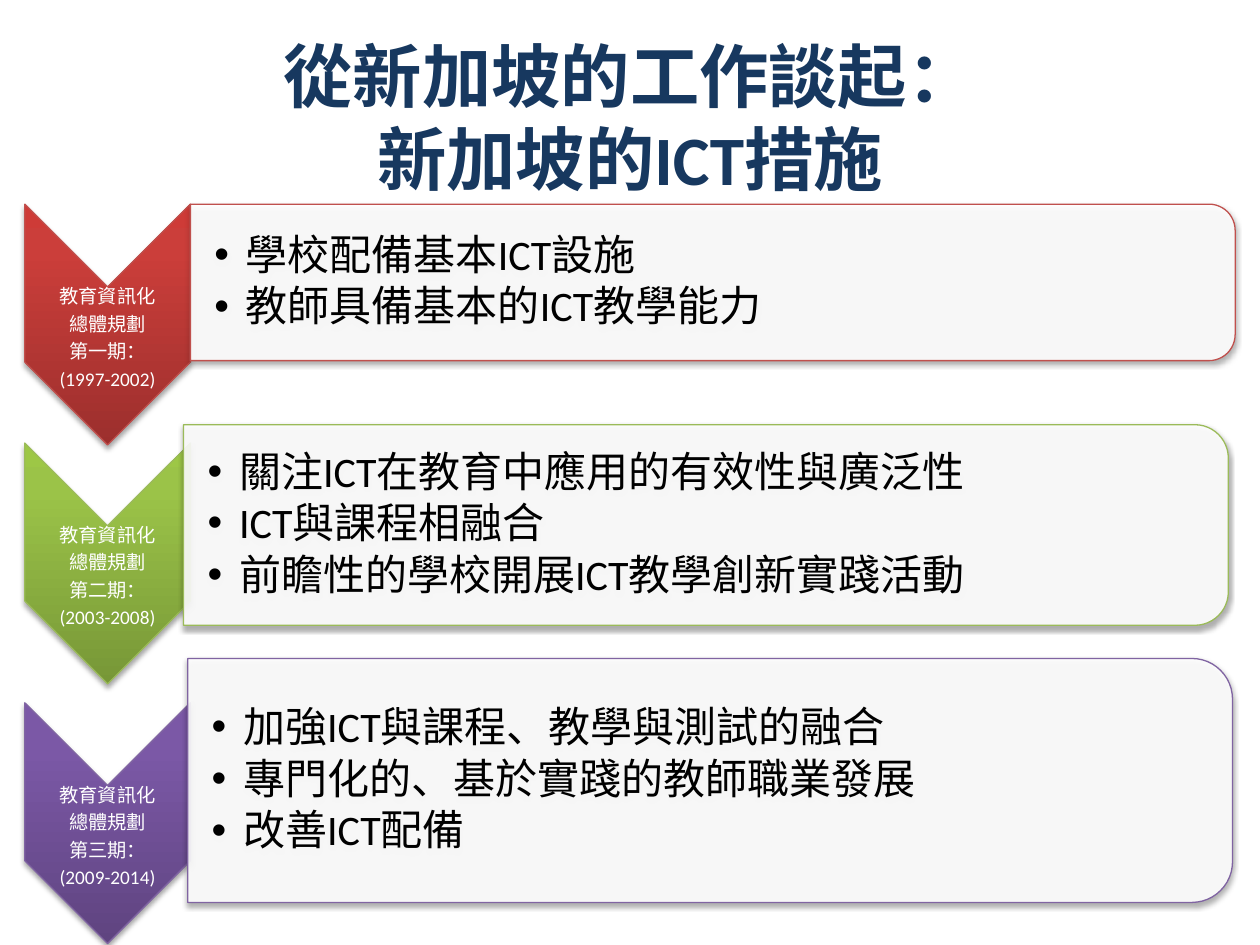
from copy import deepcopy
from dataclasses import dataclass
from math import cos, pi, sin

from lxml import etree
from pptx import Presentation
from pptx.dml.color import RGBColor
from pptx.enum import text
from pptx.oxml.ns import qn
from pptx.util import Pt

FONT = "Calibri"
COLORS = {
    "title": "17385F", "white": "FFFFFF", "black": "000000",
    "red": "C0504D", "green": "9BBB59", "purple": "8064A2",
}
# Gradient stops at 0, 80 and 100 percent, from the bottom up
GRADIENTS = {
    "red": ("9C2F2D", "CB3E3A", "CE3B37"),
    "green": ("779737", "9BC348", "9DC746"),
    "purple": ("5F4480", "7B58A6", "7C57A8"),
}
CHEVRON_LEFT, CHEVRON_WIDTH, CHEVRON_HEIGHT = 14.2, 94.6, 137.6
PANEL_WIDTH = 597


@dataclass
class Phase:
    color: str
    ordinal: str
    years: str
    chevron_top: float
    panel_left: float
    panel_top: float
    panel_height: float
    measures: tuple[str, ...]


PHASES = [
    Phase("red", "一", "1997-2002", 116.7, 108.8, 116.7, 89.4,
          ("學校配備基本ICT設施", "教師具備基本的ICT教學能力")),
    Phase("green", "二", "2003-2008", 253.2, 104.9, 242.7, 114.6,
          ("關注ICT在教育中應用的有效性與廣泛性", "ICT與課程相融合",
           "前瞻性的學校開展ICT教學創新實踐活動")),
    Phase("purple", "三", "2009-2014", 401.6, 107.3, 376.3, 139.4,
          ("加強ICT與課程、教學與測試的融合", "專門化的、基於實踐的教師職業發展",
           "改善ICT配備")),
]


def rgb(name: str) -> RGBColor:
    return RGBColor.from_string(COLORS[name])


def add_outline(slide, points: list[tuple[float, float]], line_color: str):
    """Draw a closed outline with a thin line and a soft shadow below it."""
    vertices = [(Pt(x), Pt(y)) for x, y in points]
    builder = slide.shapes.build_freeform(*vertices[0])
    builder.add_line_segments(vertices[1:], close=True)
    shape = builder.convert_to_shape()
    shape.line.color.rgb = rgb(line_color)
    shape.line.width = Pt(0.75)
    shape.shadow.inherit = False
    effects = shape._element.spPr.find(qn("a:effectLst"))
    shadow = etree.SubElement(
        effects, qn("a:outerShdw"), blurRad=str(Pt(3.1)), dist=str(Pt(1.8)),
        dir="5400000", rotWithShape="0")
    color = etree.SubElement(shadow, qn("a:srgbClr"), val=COLORS["black"])
    etree.SubElement(color, qn("a:alpha"), val="35000")
    return shape


def fill_gradient(shape, colors: tuple[str, ...]) -> None:
    shape.fill.gradient()
    shape.fill.gradient_angle = 90
    stop_list = shape._element.spPr.find(".//" + qn("a:gsLst"))
    stop_list.append(deepcopy(stop_list[0]))
    for stop, position, color in zip(shape.fill.gradient_stops, (0, 0.8, 1), colors):
        stop.position = position
        stop.color.rgb = RGBColor.from_string(color)


def write_lines(shape, lines: tuple[str, ...], margins: tuple[float, ...], size: float,
                color: str, space_after: float, bulleted: bool = False) -> None:
    """Fill a shape with paragraphs; margins are left, top, right, bottom."""
    frame = shape.text_frame
    frame.word_wrap = True
    frame.vertical_anchor = text.MSO_ANCHOR.MIDDLE
    (frame.margin_left, frame.margin_top,
     frame.margin_right, frame.margin_bottom) = map(Pt, margins)
    for index, line in enumerate(lines):
        paragraph = frame.add_paragraph() if index else frame.paragraphs[0]
        paragraph.text = line
        paragraph.alignment = text.PP_ALIGN.LEFT if bulleted else text.PP_ALIGN.CENTER
        paragraph.line_spacing = 0.9
        paragraph.space_after = Pt(space_after)
        if bulleted:
            properties = paragraph._p.get_or_add_pPr()
            properties.set("marL", str(Pt(18)))
            properties.set("indent", str(Pt(-18)))
            etree.SubElement(properties, qn("a:buFont"), typeface="Arial")
            etree.SubElement(properties, qn("a:buChar"), char="•")
        paragraph.font.name = FONT
        paragraph.font.size = Pt(size)
        paragraph.font.color.rgb = rgb(color)


def add_chevron(slide, phase: Phase) -> None:
    left, right = CHEVRON_LEFT, CHEVRON_LEFT + CHEVRON_WIDTH
    middle, depth = (left + right) / 2, CHEVRON_WIDTH / 2
    top, bottom = phase.chevron_top, phase.chevron_top + CHEVRON_HEIGHT
    shape = add_outline(slide, [
        (right, top), (right, bottom - depth), (middle, bottom),
        (left, bottom - depth), (left, top), (middle, top + depth)], phase.color)
    fill_gradient(shape, GRADIENTS[phase.color])
    lines = ("教育資訊化", "總體規劃", f"第{phase.ordinal}期：", f"({phase.years})")
    write_lines(shape, lines, (0.7, 40, 0.7, 24), 11, "white", 3.85)


def add_panel(slide, phase: Phase) -> None:
    left, right = phase.panel_left, phase.panel_left + PANEL_WIDTH
    top, bottom = phase.panel_top, phase.panel_top + phase.panel_height
    radius, steps = phase.panel_height / 6, 12
    turns = [step * pi / 2 / steps for step in range(steps + 1)]
    upper = [(right - radius + radius * sin(turn), top + radius - radius * cos(turn))
             for turn in turns]
    lower = [(x, top + bottom - y) for x, y in reversed(upper)]
    shape = add_outline(slide, [(left, top), *upper, *lower, (left, bottom)], phase.color)
    shape.fill.solid()
    shape.fill.fore_color.rgb = rgb("white")
    fill_color = shape._element.spPr.find(qn("a:solidFill"))[0]
    etree.SubElement(fill_color, qn("a:alpha"), val="90000")
    write_lines(shape, phase.measures, (13.7, 6, 6, 6), 24, "black", 3.6, bulleted=True)


def add_title(slide) -> None:
    title = slide.shapes.title
    title.left, title.top, title.width, title.height = map(Pt, (36, 21.6, 648, 90))
    frame = title.text_frame
    frame.auto_size = text.MSO_AUTO_SIZE.NONE
    frame.vertical_anchor = text.MSO_ANCHOR.MIDDLE
    paragraph = frame.paragraphs[0]
    paragraph.text = "從新加坡的工作談起：\v新加坡的ICT措施"
    paragraph.alignment = text.PP_ALIGN.CENTER
    paragraph.font.name = FONT
    paragraph.font.size = Pt(39.6)
    paragraph.font.bold = True
    paragraph.font.color.rgb = rgb("title")


def main() -> None:
    presentation = Presentation()
    presentation.slide_width, presentation.slide_height = Pt(720), Pt(540)
    slide = presentation.slides.add_slide(presentation.slide_layouts[5])

    add_title(slide)
    # One chevron and one panel of measures per phase
    for phase in PHASES:
        add_chevron(slide, phase)
        add_panel(slide, phase)

    presentation.save("out.pptx")


if __name__ == "__main__":
    main()
